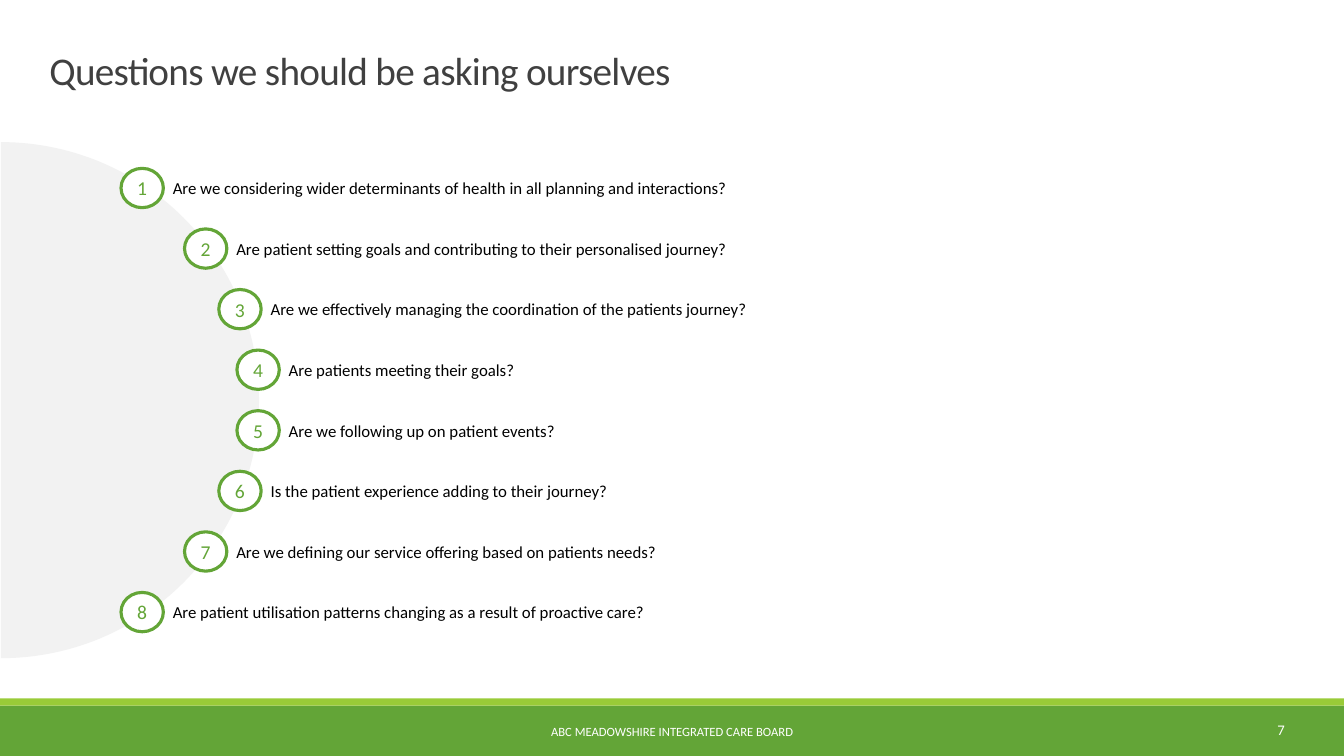
from dataclasses import dataclass
from math import cos, pi, sin

from pptx import Presentation
from pptx.dml.color import RGBColor
from pptx.enum.shapes import MSO_SHAPE
from pptx.enum.text import MSO_ANCHOR, PP_ALIGN
from pptx.util import Inches, Pt

GREEN, LIME, GREY = "63A537", "99CB38", "F2F2F2"
DARK, BLACK, WHITE = "404040", "000000", "FFFFFF"


@dataclass
class Question:
    text: str
    left: float   # left edge of the number badge
    width: float  # width of the label


QUESTIONS = [
    Question("Are we considering wider determinants of health in all planning and interactions?", 1.2, 6.77),
    Question("Are patient setting goals and contributing to their personalised journey?", 1.83, 6.15),
    Question("Are we effectively managing the coordination of the patients journey?", 2.17, 5.88),
    Question("Are patients meeting their goals?", 2.35, 5.8),
    Question("Are we following up on patient events?", 2.35, 5.88),
    Question("Is the patient experience adding to their journey?", 2.17, 6.15),
    Question("Are we defining our service offering based on patients needs?", 1.83, 6.77),
    Question("Are patient utilisation patterns changing as a result of proactive care?", 1.2, 6.77),
]
FIRST_TOP, STEP = 1.67, 0.601
BADGE_W, ROW_H, LABEL_OFFSET = 0.42, 0.39, 0.215


def color(value: str) -> RGBColor:
    return RGBColor.from_string(value)


def paint(sp, fill: str | None = None, line: str | None = None) -> None:
    sp.shadow.inherit = False
    if fill:
        sp.fill.solid()
        sp.fill.fore_color.rgb = color(fill)
    else:
        sp.fill.background()
    if line:
        sp.line.color.rgb = color(line)
        sp.line.width = Pt(2.25)
    else:
        sp.line.fill.background()


def add_shape(shapes, kind, left: float, top: float, width: float, height: float,
              fill: str | None = None, line: str | None = None):
    sp = shapes.add_shape(kind, Inches(left), Inches(top), Inches(width), Inches(height))
    paint(sp, fill, line)
    return sp


def add_box(shapes, left: float, top: float, width: float, height: float):
    return shapes.add_textbox(Inches(left), Inches(top), Inches(width), Inches(height))


def write(sp, text: str, *, size: float, ink: str, align=PP_ALIGN.LEFT,
          insets=(0.1, 0.05, 0.1, 0.05), before: float = 0,
          line_spacing: float = 1, tracking: float = 0) -> None:
    tf = sp.text_frame
    tf.word_wrap = True
    tf.vertical_anchor = MSO_ANCHOR.MIDDLE
    tf.margin_left, tf.margin_top, tf.margin_right, tf.margin_bottom = map(Inches, insets)
    p = tf.paragraphs[0]
    p.alignment = align
    p.space_before = Pt(before)
    p.line_spacing = line_spacing
    r = p.add_run()
    r.text = text
    r.font.size = Pt(size)
    r.font.name = "Calibri"
    r.font.color.rgb = color(ink)
    if tracking:
        r.font._element.set("spc", str(round(tracking * 100)))


def add_half_disc(shapes, x: float, y: float, radius: float, steps: int = 120) -> None:
    angles = [pi * i / steps - pi / 2 for i in range(steps + 1)]
    points = [(Inches(x + radius * cos(a)), Inches(y + radius * sin(a))) for a in angles]
    builder = shapes.build_freeform(*points[0])
    builder.add_line_segments(points[1:], close=True)
    paint(builder.convert_to_shape(), GREY)


def add_question(shapes, number: int, question: Question) -> None:
    group = shapes.add_group_shape().shapes
    top = FIRST_TOP + (number - 1) * STEP
    label = add_shape(group, MSO_SHAPE.ROUNDED_RECTANGLE, question.left + LABEL_OFFSET, top,
                      question.width, ROW_H)
    write(label, question.text, size=12, ink=BLACK, insets=(0.28, 0.04, 0.08, 0.04))
    badge = add_shape(group, MSO_SHAPE.OVAL, question.left, top, BADGE_W, ROW_H, WHITE, GREEN)
    write(badge, str(number), size=14, ink=GREEN, align=PP_ALIGN.CENTER, before=6)


def main() -> None:
    prs = Presentation()
    prs.slide_width, prs.slide_height = Inches(13.33), Inches(7.5)
    s = prs.slides.add_slide(prs.slide_layouts[6])

    # Footer bands
    add_shape(s.shapes, MSO_SHAPE.RECTANGLE, 0, 7, 13.33, 0.5, GREEN)
    add_shape(s.shapes, MSO_SHAPE.RECTANGLE, 0, 6.93, 13.33, 0.07, LIME)

    # Half disc and title
    add_half_disc(s.shapes, 0.01, 3.97, 2.56)
    write(add_box(s.shapes, 0.49, 0, 12.35, 1.45), "Questions we should be asking ourselves",
          size=28, ink=DARK, insets=(0, 0, 0, 0), line_spacing=0.85, tracking=-0.5)

    # Numbered questions along the arc
    for number, question in enumerate(QUESTIONS, 1):
        add_question(s.shapes, number, question)

    # Footer text
    write(add_box(s.shapes, 11.42, 7.04, 1.42, 0.4), "7",
          size=10.5, ink=WHITE, align=PP_ALIGN.RIGHT)
    write(add_box(s.shapes, 4.03, 7.06, 5.27, 0.4), "ABC MEADOWSHIRE INTEGRATED CARE BOARD",
          size=9, ink=WHITE, align=PP_ALIGN.CENTER)

    prs.save("out.pptx")


if __name__ == "__main__":
    main()
